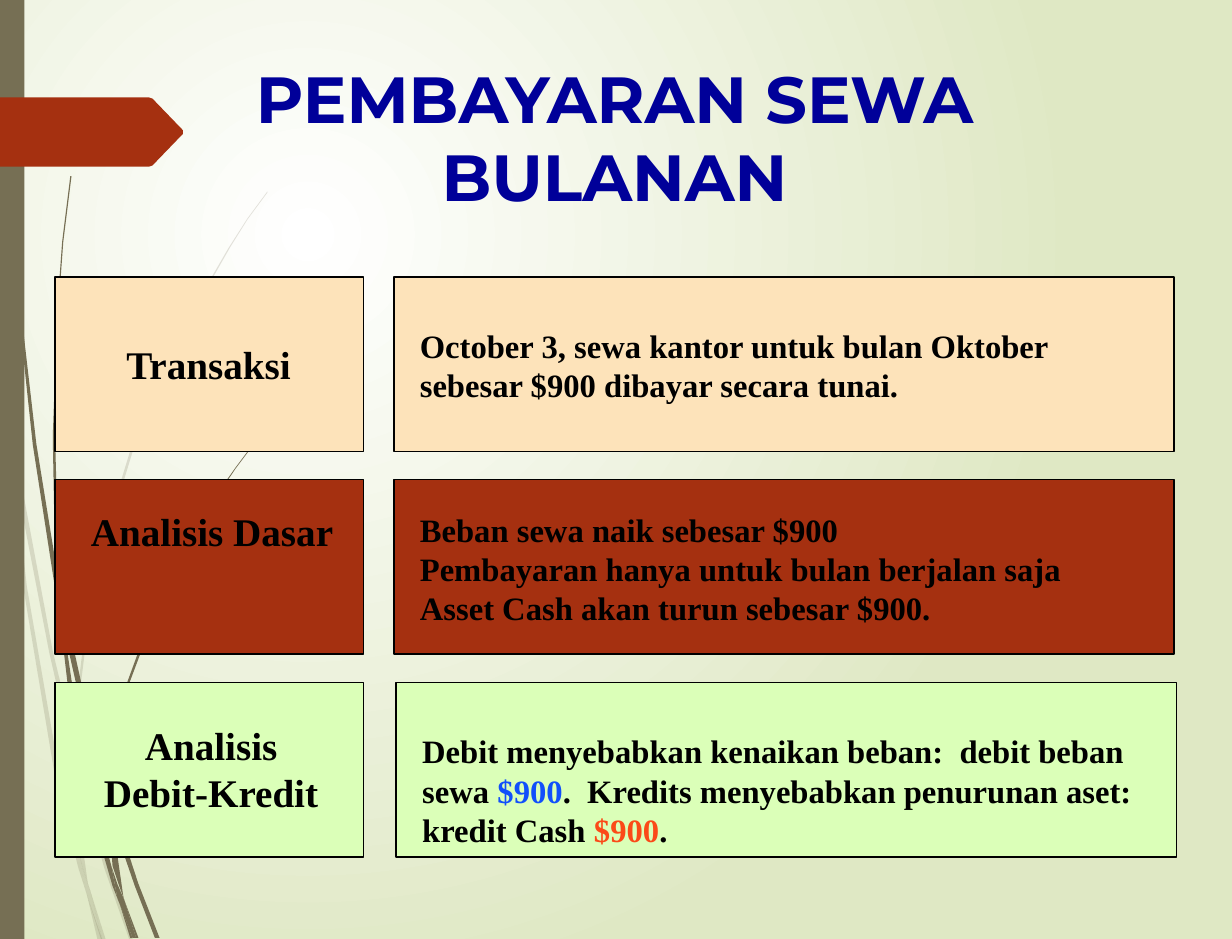
from lxml import etree
from pptx import Presentation
from pptx.dml.color import RGBColor as RGB
from pptx.enum.shapes import MSO_SHAPE as SHAPE
from pptx.enum.text import MSO_AUTO_SIZE as FIT, PP_ALIGN as ALIGN
from pptx.oxml.ns import qn
from pptx.util import Cm, Pt

COLORS = {
    "white": "FFFFFF", "sage": "DFE8C4", "olive": "766F54", "rust": "A53010",
    "peach": "FDE3BA", "mint": "DBFFB8", "navy": "000099", "black": "000000",
    "blue": "114FFB", "orange": "FB4A18",
}
SERIF = "Times New Roman"
UNIT = Cm(0.0254)  # outlines are drawn in hundredths of an inch

# Grass blades behind the content
PALE_BLADES = [
    [(8, 373), (6, 343), (0, 300), (0, 319), (7, 367)],
    [(42, 556), (61, 639), (62, 625), (45, 555), (10, 368), (12, 401)],
    [(67, 647), (64, 635), (64, 651), (89, 740), (110, 800), (113, 800), (93, 738)],
    [(87, 800), (90, 800), (77, 759)],
    [(68, 728), (51, 661), (23, 500), (12, 401), (8, 373), (20, 501), (47, 662),
     (67, 740), (74, 762), (72, 754)],
    [(61, 639), (63, 689), (68, 729), (70, 738), (77, 759), (75, 753), (66, 689),
     (64, 651), (64, 649)],
    [(64, 623), (80, 493), (117, 372), (167, 262), (196, 211), (211, 187), (228, 164),
     (228, 163), (211, 186), (195, 211), (166, 261), (115, 371), (78, 492), (62, 623),
     (62, 625), (64, 635)],
    [(74, 762), (83, 800), (87, 800)],
    [(70, 738), (68, 728), (72, 754), (74, 762), (86, 800), (87, 800), (77, 759)],
]
DARK_BLADES = [
    [(6, 117), (14, 248), (28, 379), (48, 508), (49, 513), (48, 488), (48, 483),
     (31, 378), (16, 248), (6, 117), (4, 51), (3, 0), (2, 0), (3, 51)],
    [(76, 631), (92, 688), (92, 676), (92, 673), (80, 630), (52, 504), (55, 539)],
    [(98, 692), (95, 684), (96, 700), (115, 755), (132, 799), (136, 799), (118, 753)],
    [(95, 738), (85, 701), (63, 593), (55, 539), (49, 509), (59, 594), (81, 703),
     (96, 755), (102, 770), (100, 765)],
    [(52, 504), (50, 483), (47, 372), (50, 261), (54, 206), (61, 150), (60, 150),
     (53, 206), (49, 261), (45, 372), (47, 479), (52, 503)],
    [(116, 799), (118, 799), (106, 767)],
    [(49, 509), (55, 539), (52, 504), (52, 503), (48, 479), (48, 484)],
    [(96, 676), (108, 588), (138, 508), (178, 433), (201, 399), (213, 383), (227, 367),
     (226, 367), (213, 382), (201, 398), (177, 432), (136, 506), (106, 588), (92, 673),
     (96, 684)],
    [(102, 770), (111, 799), (113, 799)],
    [(92, 688), (96, 738), (101, 753), (106, 767), (105, 763), (96, 700), (94, 694)],
    [(100, 753), (95, 738), (100, 765), (102, 770), (113, 799), (116, 799), (106, 767)],
]
TAG = [(0, 83), (127, 83), (130, 84), (156, 111), (156, 114), (130, 141), (127, 142),
       (0, 142)]

# fill, panel shift, label box, label lines, body box, body paragraphs of (text, colour)
ROWS = [
    ("peach", 0, (2.46, 7.24, 4.11, 1.27), ["Transaksi"],
     (8.84, 6.93, 15.72, 1.96),
     [[("October 3, sewa kantor untuk bulan Oktober sebesar $900 dibayar secara tunai.",
        "black")]]),
    ("rust", 0, (1.68, 10.85, 5.82, 1.27), ["Analisis Dasar"],
     (8.84, 10.9, 15.29, 2.79),
     [[("Beban sewa naik sebesar $900", "black")],
      [("Pembayaran hanya untuk bulan berjalan saja", "black")],
      [("Asset Cash akan turun sebesar $900.", "black")]]),
    ("mint", 0.05, (1.98, 15.49, 5.18, 2.31), ["Analisis", "Debit-Kredit"],
     (8.89, 15.7, 16.21, 2.82),
     [[("Debit menyebabkan kenaikan beban:  debit beban sewa ", "black"),
       ("$900", "blue"),
       (".  Kredits menyebabkan penurunan aset:  kredit Cash ", "black"),
       ("$900", "orange"), (".", "black")]]),
]
ROW_TOP, ROW_STEP, ROW_HEIGHT = 5.99, 4.39, 3.78


def color(name):
    return RGB.from_string(COLORS[name])


def set_background(s):
    """Radial gradient with its centre in the upper left quarter."""
    fill = s.background.fill
    fill.gradient()
    for stop, name, position in zip(fill.gradient_stops, ("white", "sage"), (0, 1)):
        stop.color.rgb = color(name)
        stop.position = position
    grad = s.element.find(".//" + qn("a:gradFill"))
    grad.remove(grad.find(qn("a:lin")))
    path = etree.SubElement(grad, qn("a:path"), path="circle")
    etree.SubElement(path, qn("a:fillToRect"), l="50000", t="50000", r="100000", b="100000")


def paint(sp, fill, outlined=False):
    sp.shadow.inherit = False
    sp.fill.solid()
    sp.fill.fore_color.rgb = color(fill)
    if outlined:
        sp.line.color.rgb = color("black")
        sp.line.width = Pt(1)
    else:
        sp.line.fill.background()


def add_outline(s, points, fill, opacity=100):
    builder = s.shapes.build_freeform(*points[0], scale=UNIT)
    builder.add_line_segments(points[1:], close=True)
    sp = builder.convert_to_shape()
    paint(sp, fill)
    if opacity < 100:
        rgb = sp.element.spPr.find(qn("a:solidFill"))[0]
        etree.SubElement(rgb, qn("a:alpha"), val=str(opacity * 1000))


def add_rect(s, box, fill, outlined=False):
    sp = s.shapes.add_shape(SHAPE.RECTANGLE, *map(Cm, box))
    paint(sp, fill, outlined)


def add_text(s, box, paragraphs, size, font=SERIF, align=ALIGN.LEFT, wrap=True):
    tf = s.shapes.add_textbox(*map(Cm, box)).text_frame
    tf.word_wrap = wrap
    tf.auto_size = FIT.SHAPE_TO_FIT_TEXT
    for i, runs in enumerate(paragraphs):
        p = tf.add_paragraph() if i else tf.paragraphs[0]
        p.alignment = align
        for text, name in runs:
            r = p.add_run()
            r.text = text
            r.font.name, r.font.size, r.font.bold = font, Pt(size), True
            r.font.color.rgb = color(name)


def main():
    prs = Presentation()
    prs.slide_width, prs.slide_height = Cm(26.67), Cm(20.32)
    s = prs.slides.add_slide(prs.slide_layouts[6])

    # Backdrop
    set_background(s)
    for blade in PALE_BLADES:
        add_outline(s, blade, "olive", 20)
    for blade in DARK_BLADES:
        add_outline(s, blade, "olive")
    add_rect(s, (0, 0, 0.53, 20.32), "olive")
    add_outline(s, TAG, "rust")

    # Title
    add_text(s, (2.74, 1.14, 21.13, 3.66), [[("PEMBAYARAN SEWA BULANAN", "navy")]],
             40, "Montserrat", ALIGN.CENTER)

    # Label and explanation in each row
    for i, (fill, shift, label_box, label, body_box, body) in enumerate(ROWS):
        top = ROW_TOP + i * ROW_STEP
        add_rect(s, (1.19, top, 6.68, ROW_HEIGHT), fill, True)
        add_text(s, label_box, [[(line, "black")] for line in label], 24,
                 align=ALIGN.CENTER, wrap=False)
        add_rect(s, (8.53 + shift, top, 16.89, ROW_HEIGHT), fill, True)
        add_text(s, body_box, body, 20)

    prs.save("out.pptx")


if __name__ == "__main__":
    main()
